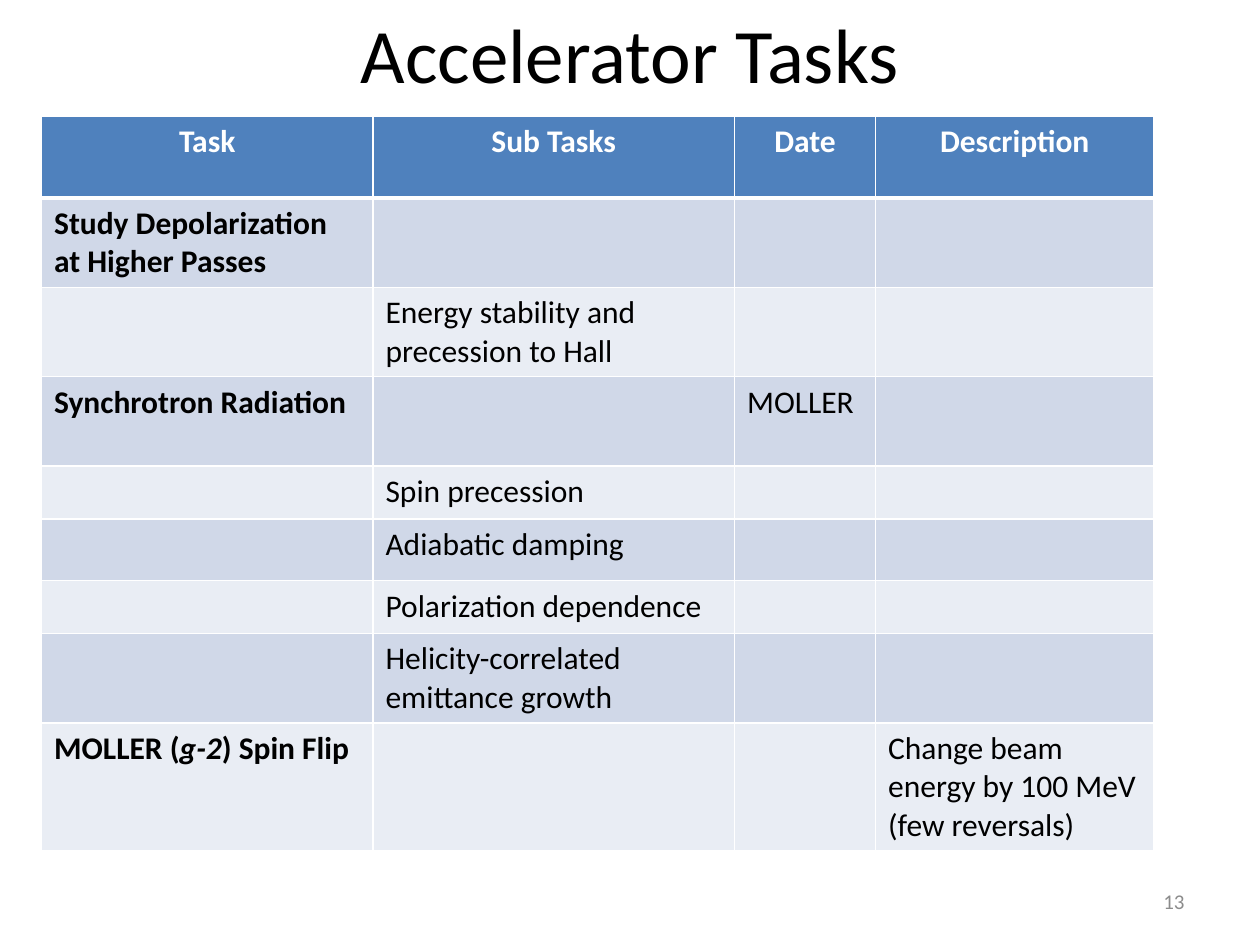
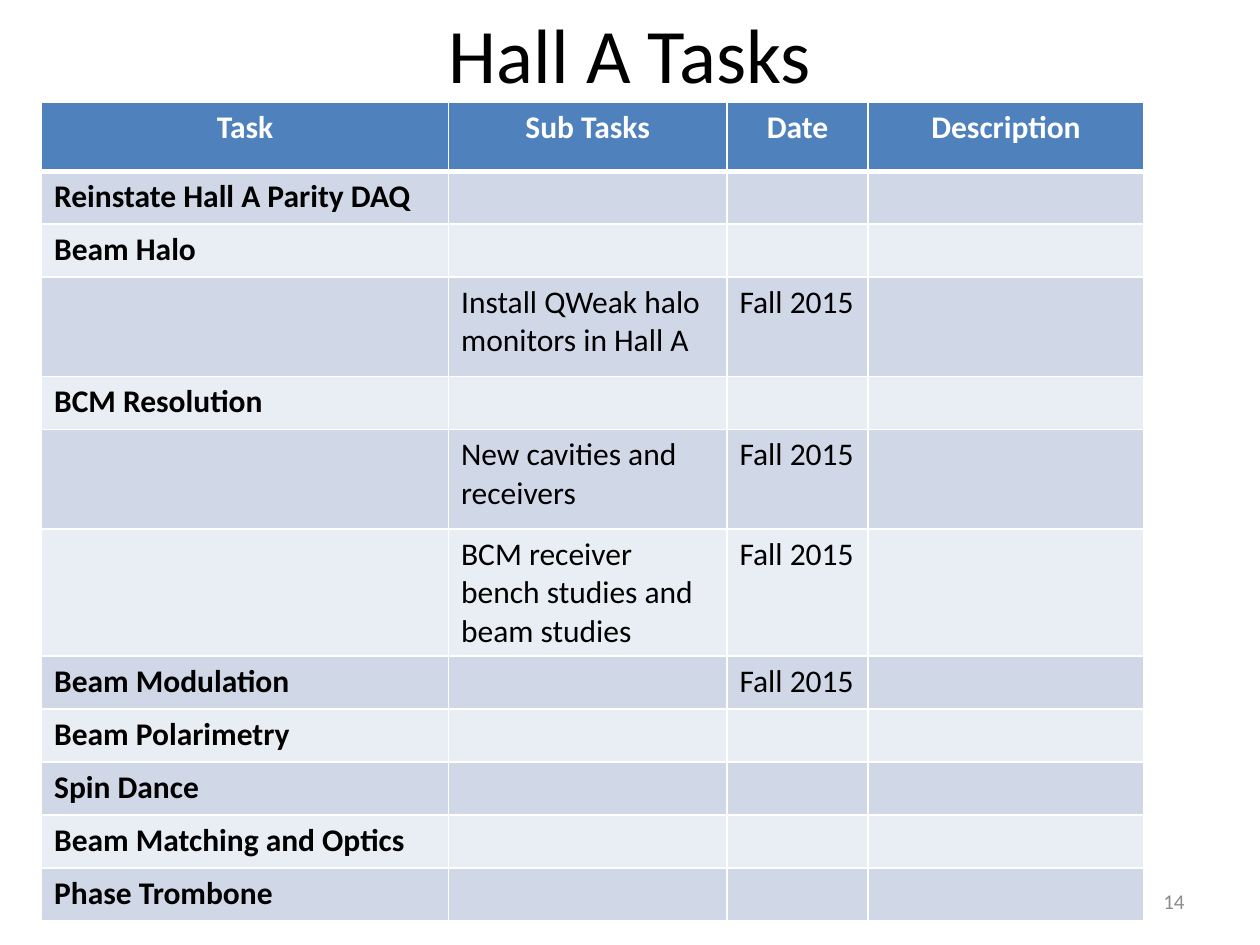
from lxml.etree import SubElement
from pptx import Presentation
from pptx.dml.color import RGBColor
from pptx.enum.text import MSO_ANCHOR as Anchor, PP_ALIGN as Align
from pptx.oxml.ns import qn
from pptx.util import Inches, Pt

FONT = "Calibri"
BLACK, WHITE, GRAY = "000000", "FFFFFF", "8C8C8C"
HEADER_FILL = "4F81BD"
BAND_FILLS = ("D0D8E8", "E9EDF4")
HEADINGS = ("Task", "Sub Tasks", "Date", "Description")
TABLE_LEFT = 0.33

# Each row: height, then task, sub task, date and description.
# Text between underscores is italic; a line break starts a new paragraph.
ACCELERATOR_ROWS = [
    (0.65, *HEADINGS),
    (0.71, "Study Depolarization at Higher Passes", "", "", ""),
    (0.71, "", "Energy stability and precession to Hall", "", ""),
    (0.71, "Synchrotron Radiation", "", "MOLLER", ""),
    (0.42, "", "Spin precession", "", ""),
    (0.49, "", "Adiabatic damping", "", ""),
    (0.42, "", "Polarization dependence", "", ""),
    (0.71, "", "Helicity-correlated emittance growth", "", ""),
    (1.01, "MOLLER (_g-2_) Spin Flip", "", "",
     "Change beam energy by 100 MeV\n(few reversals)"),
]
HALL_A_ROWS = [
    (0.55, *HEADINGS),
    (0.42, "Reinstate Hall A Parity DAQ", "", "", ""),
    (0.42, "Beam Halo", "", "", ""),
    (0.79, "", "Install QWeak halo monitors in Hall A", "Fall 2015", ""),
    (0.42, "BCM Resolution", "", "", ""),
    (0.79, "", "New cavities and receivers", "Fall 2015", ""),
    (1.01, "", "BCM receiver bench studies and beam studies", "Fall 2015", ""),
    (0.42, "Beam Modulation", "", "Fall 2015", ""),
    (0.42, "Beam Polarimetry", "", "", ""),
    (0.42, "Spin Dance", "", "", ""),
    (0.42, "Beam Matching and Optics", "", "", ""),
    (0.42, "Phase Trombone", "", "", ""),
]


def rgb(hex_color):
    return RGBColor.from_string(hex_color)


def style_paragraph(paragraph, size, color, align, bold=False):
    paragraph.alignment = align
    font = paragraph.font
    font.name, font.size, font.bold = FONT, Pt(size), bold
    font.color.rgb = rgb(color)


def add_label(slide, text, box, size, color, align):
    """Add one line of vertically centred text."""
    frame = slide.shapes.add_textbox(*map(Inches, box)).text_frame
    frame.word_wrap = True
    frame.vertical_anchor = Anchor.MIDDLE
    frame.text = text
    style_paragraph(frame.paragraphs[0], size, color, align)


def set_cell_borders(cell, bottom_width):
    properties = cell._tc.get_or_add_tcPr()
    for side, width in (("L", 1), ("R", 1), ("T", 1), ("B", bottom_width)):
        line = SubElement(properties, qn(f"a:ln{side}"), w=str(Pt(width)))
        SubElement(SubElement(line, qn("a:solidFill")), qn("a:srgbClr"), val=WHITE)


def fill_cell(cell, text, fill, color, align, bold, bottom_width):
    set_cell_borders(cell, bottom_width)
    cell.fill.solid()
    cell.fill.fore_color.rgb = rgb(fill)
    frame = cell.text_frame
    for index, line in enumerate(text.split("\n")):
        paragraph = frame.add_paragraph() if index else frame.paragraphs[0]
        style_paragraph(paragraph, 18, color, align, bold)
        for part_index, part in enumerate(line.split("_")):
            if part:
                run = paragraph.add_run()
                run.text = part
                if part_index % 2:
                    run.font.italic = True


def add_task_table(slide, top, column_widths, rows):
    heights = [row[0] for row in rows]
    table = slide.shapes.add_table(
        len(rows), len(column_widths), Inches(TABLE_LEFT), Inches(top),
        Inches(sum(column_widths)), Inches(sum(heights))).table
    for column, width in zip(table.columns, column_widths):
        column.width = Inches(width)
    for row_index, (height, *texts) in enumerate(rows):
        table.rows[row_index].height = Inches(height)
        for column_index, text in enumerate(texts):
            cell = table.cell(row_index, column_index)
            if row_index == 0:
                fill_cell(cell, text, HEADER_FILL, WHITE, Align.CENTER, True, 3)
            else:
                band = BAND_FILLS[(row_index - 1) % 2]
                fill_cell(cell, text, band, BLACK, Align.LEFT, column_index == 0, 1)


def add_task_slide(deck, title, number, top, column_widths, rows):
    slide = deck.slides.add_slide(deck.slide_layouts[6])
    add_label(slide, title, (0.5, 0, 9, 0.83), 44, BLACK, Align.CENTER)
    add_task_table(slide, top, column_widths, rows)
    add_label(slide, str(number), (7.17, 6.95, 2.33, 0.4), 12, GRAY, Align.RIGHT)


def main():
    deck = Presentation()
    deck.slide_width, deck.slide_height = Inches(10), Inches(7.5)
    add_task_slide(deck, "Accelerator Tasks", 13, 0.92,
                   (2.63, 2.87, 1.12, 2.21), ACCELERATOR_ROWS)
    add_task_slide(deck, "Hall A Tasks", 14, 0.81,
                   (3.23, 2.21, 1.12, 2.19), HALL_A_ROWS)
    deck.save("out.pptx")


if __name__ == "__main__":
    main()
